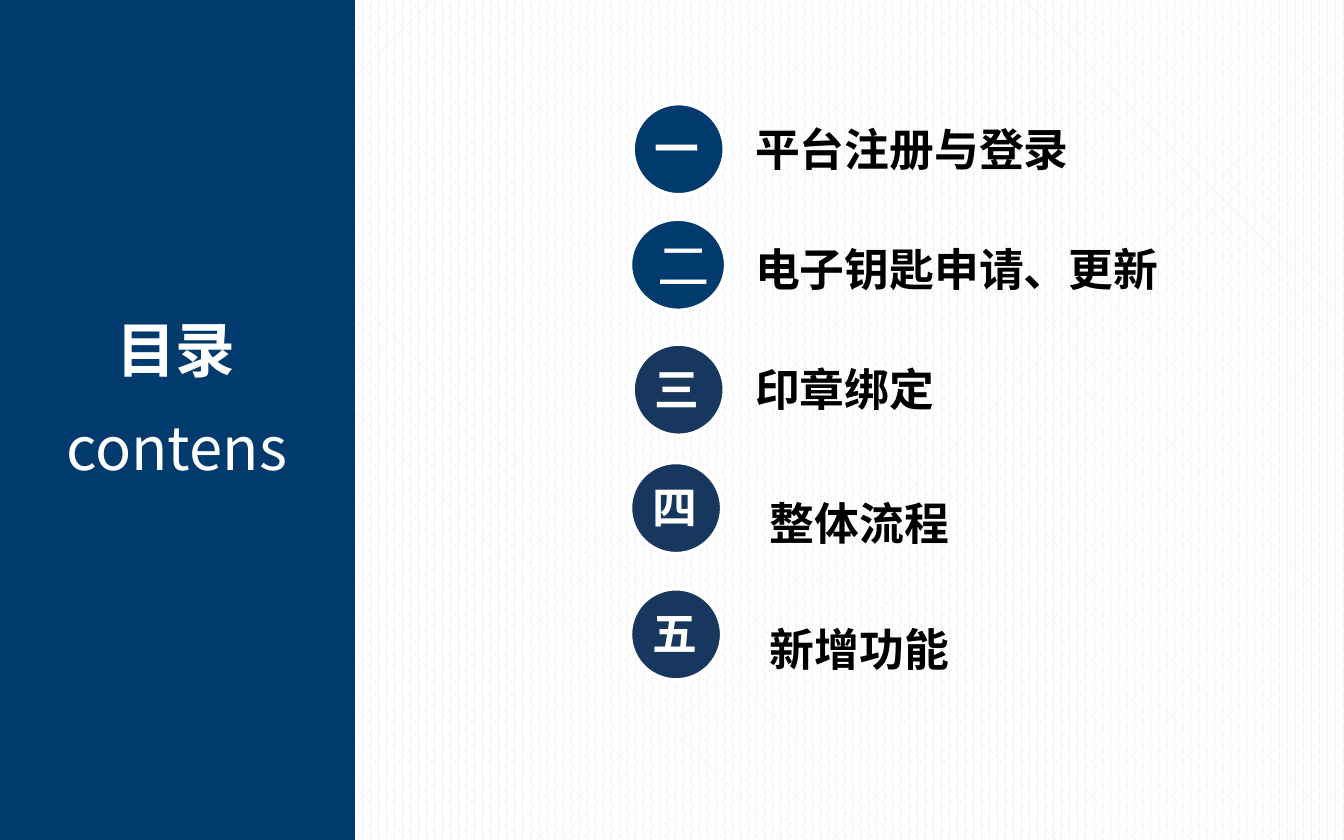
"""Build a table-of-contents slide with a side panel and five numbered entries."""
from dataclasses import dataclass

from lxml.etree import SubElement
from pptx import Presentation
from pptx.dml.color import RGBColor
from pptx.enum.dml import MSO_PATTERN
from pptx.enum.shapes import MSO_SHAPE
from pptx.enum.text import MSO_ANCHOR, MSO_AUTO_SIZE as FIT, PP_ALIGN
from pptx.oxml.ns import qn
from pptx.util import Inches, Pt

NAVY = RGBColor(0x01, 0x3B, 0x6D)
SLATE = RGBColor(0x17, 0x37, 0x5E)
WHITE = RGBColor(0xFF, 0xFF, 0xFF)
BLACK = RGBColor(0x00, 0x00, 0x00)
PALE = RGBColor(0xF2, 0xF2, 0xF2)
FONT = "Noto Sans CJK SC"
COLS, ROWS = 100, 62.5
CELL = Inches(0.1)


@dataclass(frozen=True)
class Box:
    col: float
    row: float
    cols: float
    rows: float

    def emu(self) -> tuple:
        return tuple(int(n * CELL) for n in (self.col, self.row, self.cols, self.rows))


@dataclass(frozen=True)
class Entry:
    numeral: str
    label: str
    color: RGBColor
    disc: Box
    text: Box
    numeral_box: Box | None = None
    hanging: bool = False


ENTRIES = (
    Entry("一", "平台注册与登录", NAVY, Box(47.1, 7.7, 6.8, 6.8),
          Box(55.2, 8.6, 25.6, 5), Box(47.7, 8.5, 6.3, 5)),
    Entry("二", "电子钥匙申请、更新", NAVY, Box(46.9, 16.3, 7.1, 6.8),
          Box(55.2, 17.5, 32.3, 5)),
    Entry("三", "印章绑定", SLATE, Box(47.1, 25.6, 6.8, 6.8),
          Box(55.2, 26.4, 15.5, 5), Box(47.7, 26.4, 6.3, 5)),
    Entry("四", "整体流程", SLATE, Box(46.9, 34.4, 6.8, 6.8),
          Box(56.3, 34.4, 15.5, 6.4), Box(47.6, 35.2, 6.3, 5), True),
    Entry("五", "新增功能", SLATE, Box(46.9, 43.8, 6.8, 6.8),
          Box(56.3, 43.8, 15.5, 7.1), Box(47.6, 44.6, 6.3, 5), True),
)


def write(sp, text: str, size: int, color: RGBColor, bold: bool = True,
          align: PP_ALIGN = PP_ALIGN.LEFT):
    p = sp.text_frame.paragraphs[0]
    p.text = text
    p.alignment = align
    r = p.runs[0]
    r.font.size, r.font.bold = Pt(size), bold
    r.font.color.rgb = color
    r.font.name = FONT
    SubElement(r._r.get_or_add_rPr(), qn("a:ea")).set("typeface", FONT)
    return p


def add_shape(s, kind: MSO_SHAPE, box: Box, color: RGBColor):
    sp = s.shapes.add_shape(kind, *box.emu())
    sp.shadow.inherit = False
    sp.fill.solid()
    sp.fill.fore_color.rgb = color
    sp.line.fill.background()
    return sp


def add_text(s, box: Box, text: str, size: int, color: RGBColor, bold: bool = True,
             align: PP_ALIGN = PP_ALIGN.LEFT, wrap: bool = False):
    sp = s.shapes.add_textbox(*box.emu())
    sp.text_frame.word_wrap = wrap
    sp.text_frame.auto_size = FIT.SHAPE_TO_FIT_TEXT
    return write(sp, text, size, color, bold, align)


def place_title(s, box: Box, text: str) -> None:
    sp = s.shapes.title
    sp.left, sp.top, sp.width, sp.height = box.emu()
    tf = sp.text_frame
    tf.word_wrap, tf.auto_size = False, FIT.SHAPE_TO_FIT_TEXT
    tf.vertical_anchor = MSO_ANCHOR.TOP
    write(sp, text, 32, WHITE, align=PP_ALIGN.CENTER)
    s.shapes._spTree.append(sp._element)


def add_entry(s, entry: Entry) -> None:
    disc = add_shape(s, MSO_SHAPE.OVAL, entry.disc, entry.color)
    disc.line.color.rgb = WHITE
    disc.line.width = Pt(2)
    if entry.numeral_box:
        add_text(s, entry.numeral_box, entry.numeral, 24, WHITE, wrap=True)
    else:
        disc.text_frame.vertical_anchor = MSO_ANCHOR.MIDDLE
        write(disc, entry.numeral, 28, WHITE, bold=False)
    p = add_text(s, entry.text, entry.label, 24, BLACK)
    if entry.hanging:
        p.line_spacing = 1.5
        pPr = p._p.get_or_add_pPr()
        pPr.set("marL", str(Inches(0.31)))
        pPr.set("indent", str(-Inches(0.31)))


def main() -> None:
    prs = Presentation()
    prs.slide_width, prs.slide_height = int(COLS * CELL), int(ROWS * CELL)
    s = prs.slides.add_slide(prs.slide_layouts[5])
    fill = s.background.fill
    fill.patterned()
    fill.pattern = MSO_PATTERN.PERCENT_60
    fill.fore_color.rgb, fill.back_color.rgb = PALE, WHITE

    add_shape(s, MSO_SHAPE.RECTANGLE, Box(-0.1, 0, 26.5, ROWS), NAVY)
    place_title(s, Box(7.6, 22.8, 11, 6.4), "目录")
    add_text(s, Box(3.7, 30.1, 18.9, 6.4), "contens", 32, WHITE, bold=False,
             align=PP_ALIGN.CENTER)
    for entry in ENTRIES:
        add_entry(s, entry)
    prs.save("out.pptx")


if __name__ == "__main__":
    main()
